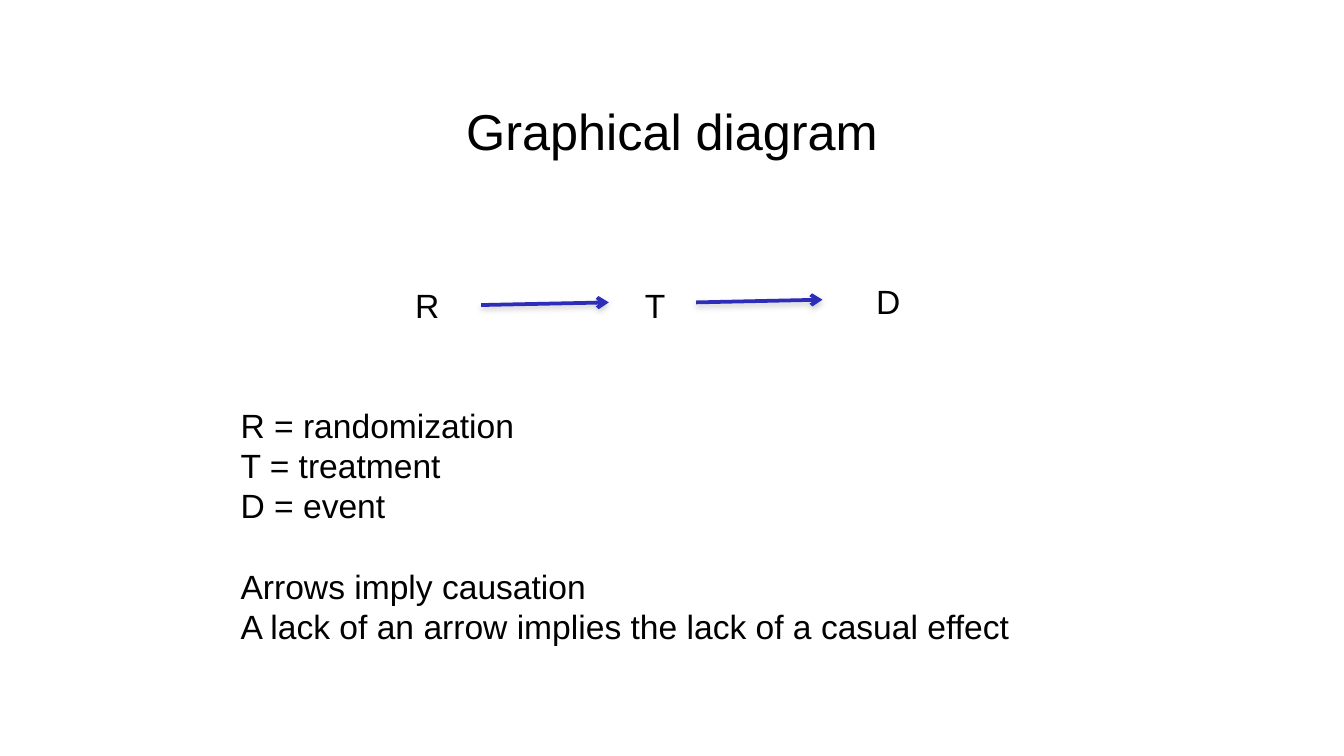
from lxml.etree import SubElement
from pptx import Presentation
from pptx.dml.color import RGBColor
from pptx.enum.shapes import MSO_CONNECTOR
from pptx.enum.text import MSO_ANCHOR, MSO_AUTO_SIZE, PP_ALIGN
from pptx.oxml import parse_xml
from pptx.oxml.ns import nsdecls, qn
from pptx.util import Inches, Pt

COLORS = {"text": "000000", "arrow": "2D2DB9", "shadow": "808080", "paper": "FFFFFF"}
FONT = "Arial"
CELL = 0.1
NODE_SIZE = (5.9, 4)
NODES = {"R": (29.9, 20.7), "T": (47, 20.7), "D": (64.2, 20.4)}
ARROWS = [("R", (35.8, 22.7), (45.3, 22.5)), (None, (51.8, 22.5), (61.2, 22.3))]
LEGEND = ["R = randomization", "T = treatment", "D = event"]
NOTES = ["Arrows imply causation", "A lack of an arrow implies the lack of a casual effect"]


def grid(*cells):
    """Turn grid columns and rows into lengths."""
    return [Inches(round(c * CELL, 2)) for c in cells]


def place(sp, left, top, width, height):
    """Put a shape on the grid."""
    sp.left, sp.top, sp.width, sp.height = grid(left, top, width, height)


def write(p, text, size=18, align=PP_ALIGN.LEFT, before=0):
    """Write one formatted run into a paragraph."""
    p.alignment = align
    p.space_before = Pt(before)
    r = p.add_run()
    r.text = text
    r.font.name = FONT
    r.font.size = Pt(size)
    r.font.color.rgb = RGBColor.from_string(COLORS["text"])


def add_title(s, text):
    """Fill the title placeholder."""
    sp = s.shapes.title
    place(sp, 7.5, 5, 85, 9.4)
    sp.text_frame.vertical_anchor = MSO_ANCHOR.MIDDLE
    write(sp.text_frame.paragraphs[0], text, size=27, align=PP_ALIGN.CENTER)


def add_node(s, name, pos):
    """Add a one-letter node of the diagram."""
    sp = s.shapes.add_textbox(*grid(*pos, *NODE_SIZE))
    sp.text_frame.word_wrap = True
    write(sp.text_frame.paragraphs[0], name)
    return sp


def add_arrow(s, start, end, source=None):
    """Add a shadowed arrow, joined to its source node if given."""
    cxn = s.shapes.add_connector(MSO_CONNECTOR.STRAIGHT, *grid(*start, *end))
    if source is not None:
        cxn.begin_connect(source, 3)
    cxn.line.color.rgb = RGBColor.from_string(COLORS["arrow"])
    cxn.line.width = Pt(2)
    SubElement(cxn.line._get_or_add_ln(), qn("a:tailEnd"), type="arrow")
    cxn._element.spPr.append(parse_xml(
        f'<a:effectLst {nsdecls("a")}>'
        f'<a:outerShdw blurRad="{Pt(3.1)}" dist="{Pt(1.6)}" dir="5400000" rotWithShape="0">'
        f'<a:srgbClr val="{COLORS["shadow"]}"><a:alpha val="38000"/></a:srgbClr>'
        '</a:outerShdw></a:effectLst>'))


def add_body(s, groups):
    """Fill the body placeholder with plain lines, a gap between groups."""
    sp = s.placeholders[1]
    place(sp, 16.9, 29.6, 65.6, 19.2)
    tf = sp.text_frame
    tf.word_wrap = True
    tf.auto_size = MSO_AUTO_SIZE.NONE
    tf.vertical_anchor = MSO_ANCHOR.TOP
    lines = [(text, 21.5 if g and not i else 0)
             for g, group in enumerate(groups) for i, text in enumerate(group)]
    for n, (text, before) in enumerate(lines):
        p = tf.add_paragraph() if n else tf.paragraphs[0]
        write(p, text, before=before)
        pPr = p._p.get_or_add_pPr()
        pPr.set("marL", "0")
        pPr.set("indent", "0")
        SubElement(pPr, qn("a:buNone"))


def main():
    """Build the slide."""
    prs = Presentation()
    prs.slide_width = Inches(10)
    prs.slide_height = prs.slide_width * 9 // 16
    s = prs.slides.add_slide(prs.slide_layouts[1])
    s.background.fill.solid()
    s.background.fill.fore_color.rgb = RGBColor.from_string(COLORS["paper"])
    add_title(s, "Graphical diagram")
    nodes = {name: add_node(s, name, pos) for name, pos in NODES.items()}
    for source, start, end in ARROWS:
        add_arrow(s, start, end, nodes.get(source))
    add_body(s, [LEGEND, NOTES])
    prs.save("out.pptx")


if __name__ == "__main__":
    main()
